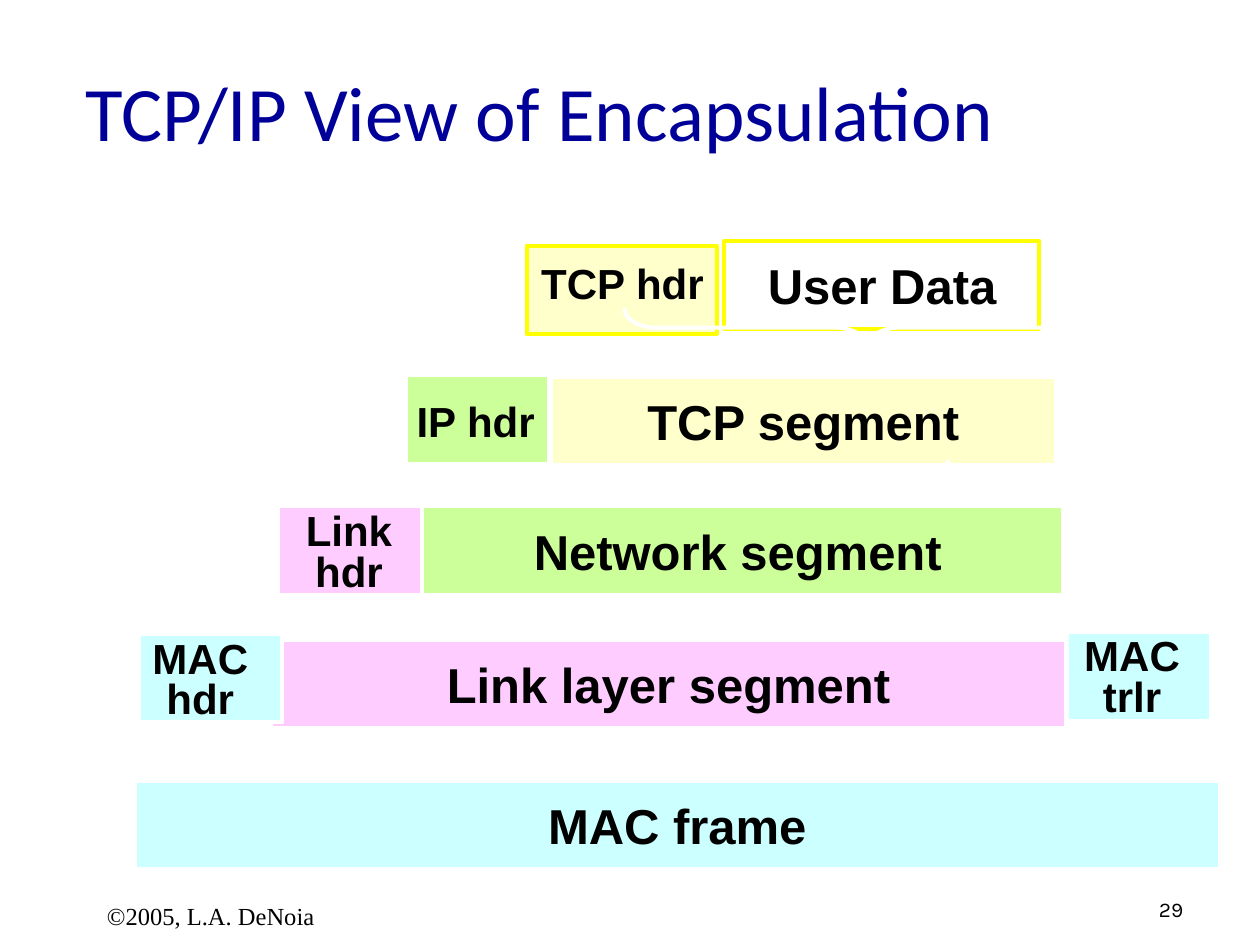
from dataclasses import dataclass

from pptx import Presentation
from pptx.dml.color import RGBColor
from pptx.enum.shapes import MSO_SHAPE
from pptx.enum.text import MSO_ANCHOR, PP_ALIGN
from pptx.util import Inches, Pt

RECTANGLE, BRACE = MSO_SHAPE.RECTANGLE, MSO_SHAPE.LEFT_BRACE
TOP, MIDDLE = MSO_ANCHOR.TOP, MSO_ANCHOR.MIDDLE
LEFT, CENTER = PP_ALIGN.LEFT, PP_ALIGN.CENTER

COLUMNS, ROWS = 100, 75          # grid of the slide
CELL = Inches(0.1)


@dataclass(frozen=True)
class Theme:
    ink: str = "000000"
    title: str = "000099"
    white: str = "FFFFFF"
    outline: str = "FFFF00"
    tcp: str = "FFFFCC"
    ip: str = "CCFF99"
    link: str = "FFCCFF"
    mac: str = "CCFFFF"
    title_size: float = 44
    payload_size: float = 28
    header_size: float = 24
    credit_size: float = 14
    number_size: float = 12
    line: float = 2.25
    tight: float = 0.8


THEME = Theme()


@dataclass(frozen=True)
class Box:
    """Left, top, width and height in grid cells."""
    x: float
    y: float
    w: float
    h: float

    def inner(self, dx, dy, w, h):
        return Box(self.x + dx, self.y + dy, w, h)

    def emu(self):
        return [round(n * CELL) for n in (self.x, self.y, self.w, self.h)]


def write(frame, text, size, font="Arial", color=THEME.ink, bold=False,
          align=LEFT, anchor=TOP, spacing=None):
    frame.word_wrap = True
    frame.vertical_anchor = anchor
    paragraph = frame.paragraphs[0]
    paragraph.alignment = align
    paragraph.line_spacing = spacing
    for index, line in enumerate(text.split("\n")):
        if index:
            paragraph.add_line_break()
        run = paragraph.add_run()
        run.text = line
        run.font.name, run.font.size, run.font.bold = font, Pt(size), bold
        run.font.color.rgb = RGBColor.from_string(color)


def add_text(slide, box, text, size, **style):
    frame = slide.shapes.add_textbox(*box.emu()).text_frame
    write(frame, text, size, **style)
    return frame


def add_outlined(slide, kind, box, line, fill=None):
    shape = slide.shapes.add_shape(kind, *box.emu())
    shape.shadow.inherit = False
    shape.line.color.rgb = RGBColor.from_string(line)
    shape.line.width = Pt(THEME.line)
    if fill:
        shape.fill.solid()
        shape.fill.fore_color.rgb = RGBColor.from_string(fill)
    else:
        shape.fill.background()
    return shape


def add_payload(slide, box, text, fill, line=THEME.white):
    block = add_outlined(slide, RECTANGLE, box, line, fill)
    write(block.text_frame, text, THEME.payload_size, bold=True,
          align=CENTER, anchor=MIDDLE)


def add_brace(slide, box, curve):
    """Brace lying on its side, so that it fills the given wide box."""
    upright = box.inner((box.w - box.h) / 2, (box.h - box.w) / 2, box.h, box.w)
    brace = add_outlined(slide, BRACE, upright, THEME.white)
    brace.rotation = 270
    brace.adjustments[0] = curve


def add_header(slide, box, text, label, fill, line=THEME.white, spacing=None):
    add_outlined(slide, RECTANGLE, box, line, fill)
    add_text(slide, box.inner(*label), text, THEME.header_size, bold=True,
             align=CENTER, anchor=MIDDLE, spacing=spacing)


def add_title(slide, box):
    add_text(slide, box, "TCP/IP View of Encapsulation", THEME.title_size,
             font="Calibri", color=THEME.title, anchor=MIDDLE)


def add_footer(slide, box):
    credit = add_text(slide, box.inner(0, 0, 20.8, 5), "©2005, L.A. DeNoia",
                      THEME.credit_size, font="Times New Roman")
    credit.margin_top, credit.margin_bottom = 4 * CELL, 0
    add_text(slide, box.inner(83.5, 2.4, 7.4, 3), "29", THEME.number_size,
             font="Karla")


def add_encapsulation(slide, area):
    # User data with its TCP header
    add_payload(slide, area.inner(46.8, 0, 25, 7), "User Data",
                THEME.white, THEME.outline)
    add_header(slide, area.inner(31.1, 0.4, 15.1, 7), "TCP hdr",
               (-1, 0.4, 17.2, 5), THEME.tcp, THEME.outline)

    # Segments: block, text, fill, brace offset and size, brace curve
    segments = [
        ((33, 10.8, 40.1, 7), "TCP segment", THEME.tcp,
         (5.85, -5.45, 38.6, 3.1), 0.82),
        ((22, 21.1, 51.7, 7), "Network segment", THEME.ip,
         (-8.4, -3.7, 51, 2.6), 1.41),
        ((10.8, 31.7, 63.1, 7), "Link layer segment", THEME.link,
         (0.05, -3.65, 62.9, 3.2), 1.44),
        ((0, 42.9, 86.1, 7), "MAC frame", THEME.mac,
         (0.05, -3.95, 85.9, 3.6), 1.84),
    ]
    for block, text, fill, brace, curve in segments:
        box = area.inner(*block)
        add_payload(slide, box, text, fill)
        add_brace(slide, box.inner(*brace), curve)

    # Headers and trailer: left, top, text, label offset and size, fill
    headers = [
        (21.5, 10.7, "IP hdr", (-1.4, 1, 13.9, 5.1), THEME.ip, None),
        (11.4, 21.1, "Link\nhdr", (0.3, 0.1, 10.6, 7.5), THEME.link,
         THEME.tight),
        (74, 31.1, "MAC trlr", (-0.7, 0, 11.7, 7.5), THEME.mac, THEME.tight),
        (0.3, 31.2, "MAC hdr", (-1.1, 0.1, 12, 7.5), THEME.mac, THEME.tight),
    ]
    for x, y, text, label, fill, spacing in headers:
        add_header(slide, area.inner(x, y, 11.4, 7), text, label, fill,
                   spacing=spacing)


def main():
    deck = Presentation()
    deck.slide_width, deck.slide_height = COLUMNS * CELL, ROWS * CELL
    slide = deck.slides.add_slide(deck.slide_layouts[6])
    add_title(slide, Box(5.8, 2.5, 85, 12.5))
    add_footer(slide, Box(7.5, 68.3, 90.9, 5.4))
    add_encapsulation(slide, Box(10.7, 19.1, 86.1, 49.9))
    deck.save("out.pptx")


if __name__ == "__main__":
    main()
